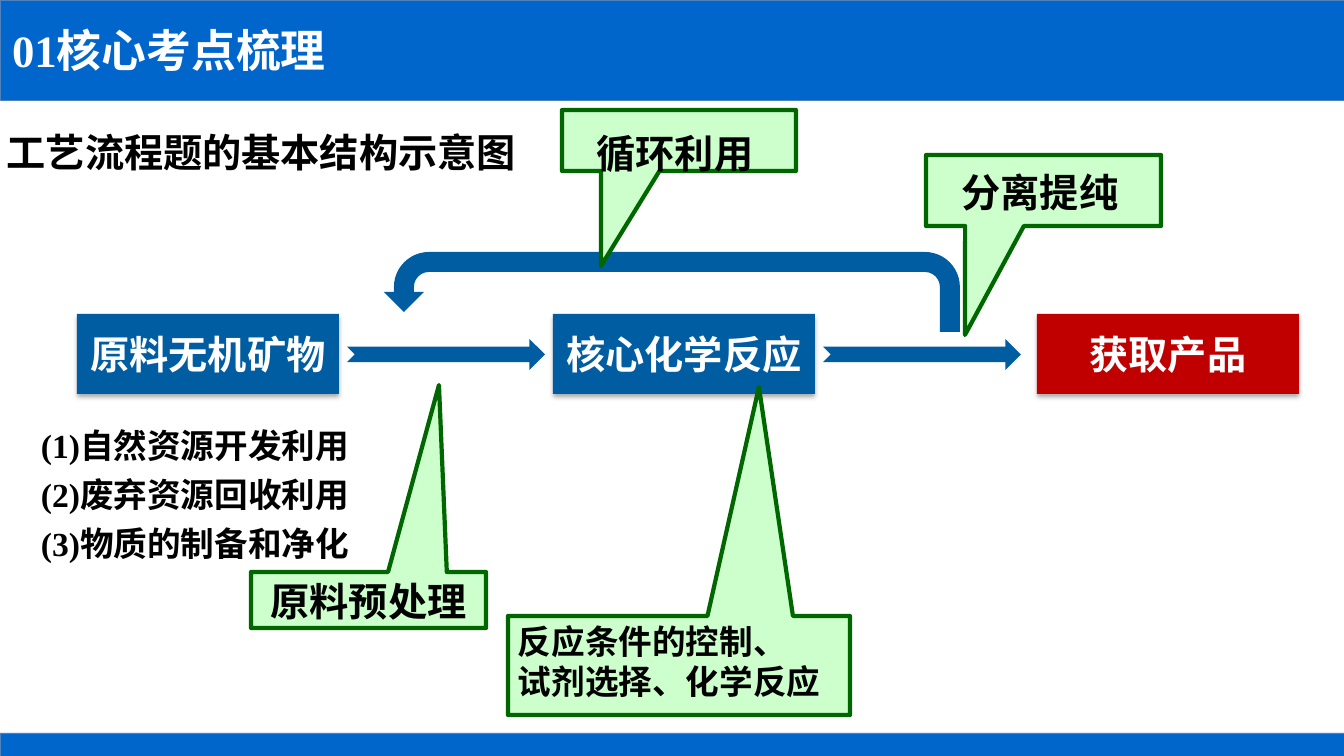
from lxml.etree import SubElement
from pptx import Presentation
from pptx.dml.color import RGBColor
from pptx.enum.shapes import MSO_SHAPE as Preset
from pptx.enum.text import MSO_ANCHOR as Anchor, MSO_AUTO_SIZE as AutoSize, PP_ALIGN as Align
from pptx.oxml.ns import qn
from pptx.util import Emu, Pt

EMU_PER_PX = 914400 / 100.8
SLIDE_W, SLIDE_H = 1344, 756

WHITE = RGBColor(0xFF, 0xFF, 0xFF)
BLACK = RGBColor(0x00, 0x00, 0x00)
BAND_BLUE = RGBColor(0x00, 0x66, 0xCC)
BAND_EDGE = RGBColor(0x4F, 0x81, 0xBD)
STEP_BLUE = RGBColor(0x00, 0x5D, 0xA2)
PRODUCT_RED = RGBColor(0xC0, 0x00, 0x00)
NOTE_GREEN = RGBColor(0xCC, 0xFF, 0xCC)
NOTE_EDGE = RGBColor(0x00, 0x66, 0x00)


def px(*lengths):
    return [Emu(round(length * EMU_PER_PX)) for length in lengths]


class FlowSlide:
    """Style and current slide, with one method per kind of element."""

    font_name = "Times New Roman"

    def __init__(self, presentation):
        title_only = presentation.slide_layouts[5]
        self.slide = presentation.slides.add_slide(title_only)
        self.shapes = self.slide.shapes
        background = self.slide.background.fill
        background.solid()
        background.fore_color.rgb = WHITE

    def add_lines(self, frame, lines, size, color=BLACK, align=Align.LEFT, spacing=None):
        for index, line in enumerate(lines):
            paragraph = frame.add_paragraph() if index else frame.paragraphs[0]
            paragraph.alignment = align
            if spacing:
                paragraph.line_spacing = spacing
            run = paragraph.add_run()
            run.text = line
            run.font.name = self.font_name
            run.font.size = Pt(size)
            run.font.bold = True
            run.font.color.rgb = color

    def block(self, preset, box, fill, edge=None, edge_pt=0):
        """Add a filled preset shape, outlined only when an edge colour is given."""
        shape = self.shapes.add_shape(preset, *px(*box))
        shape.shadow.inherit = False
        shape.fill.solid()
        shape.fill.fore_color.rgb = fill
        if edge is None:
            shape.line.fill.background()
        else:
            shape.line.color.rgb = edge
            shape.line.width = Pt(edge_pt)
        return shape

    def band(self, top, height):
        self.block(Preset.RECTANGLE, (0, top, SLIDE_W, height), BAND_BLUE, BAND_EDGE, 0.25)

    def title(self, text, box):
        title = self.shapes.title
        title.left, title.top, title.width, title.height = px(*box)
        frame = title.text_frame
        frame.vertical_anchor = Anchor.TOP
        frame.word_wrap = False
        frame.auto_size = AutoSize.SHAPE_TO_FIT_TEXT
        self.add_lines(frame, [text], 32, WHITE)
        # The title lies above the header band.
        title.element.getparent().append(title.element)

    def step(self, text, left, fill):
        shape = self.block(Preset.RECTANGLE, (left, 314, 262, 80), fill)
        shape.text_frame.vertical_anchor = Anchor.MIDDLE
        shape.text_frame.word_wrap = True
        self.add_lines(shape.text_frame, [text], 28, WHITE, Align.CENTER)
        effects = shape.element.spPr.find(qn("a:effectLst"))
        shadow = SubElement(effects, qn("a:outerShdw"), blurRad=str(Pt(3.5)),
                            dist=str(Pt(2.2)), dir="5400000", rotWithShape="0")
        black = SubElement(shadow, qn("a:srgbClr"), val=str(BLACK))
        SubElement(black, qn("a:alpha"), val="32000")

    def callout(self, box, tip, lines=(), size=28, align=Align.CENTER):
        """Add a callout whose tip is a point on the slide."""
        left, top, width, height = box
        shape = self.block(Preset.RECTANGULAR_CALLOUT, box, NOTE_GREEN, NOTE_EDGE, 3)
        shape.adjustments[0] = (tip[0] - left) / width - 0.5
        shape.adjustments[1] = (tip[1] - top) / height - 0.5
        shape.text_frame.vertical_anchor = Anchor.TOP
        shape.text_frame.word_wrap = True
        self.add_lines(shape.text_frame, lines, size, align=align)

    def label(self, text, box, size=28, align=Align.LEFT, spacing=None):
        frame = self.shapes.add_textbox(*px(*box)).text_frame
        frame.word_wrap = True
        frame.auto_size = AutoSize.SHAPE_TO_FIT_TEXT
        self.add_lines(frame, [text], size, align=align, spacing=spacing)


def main():
    presentation = Presentation()
    presentation.slide_width, presentation.slide_height = px(SLIDE_W, SLIDE_H)
    flow = FlowSlide(presentation)

    flow.band(0, 100)
    flow.band(733, 23)
    flow.title("01核心考点梳理", (2, 18, 350, 65))

    flow.step("原料无机矿物", 77, STEP_BLUE)
    flow.step("核心化学反应", 553, STEP_BLUE)
    flow.step("获取产品", 1037, PRODUCT_RED)
    for arrow_left in (347, 823):
        flow.block(Preset.NOTCHED_RIGHT_ARROW, (arrow_left, 339, 198, 31), STEP_BLUE)

    flow.callout((926, 155, 235, 71), (965, 335))
    flow.label("分离提纯", (926, 163, 228, 57), align=Align.CENTER)
    flow.callout((251, 572, 235, 56), (439, 385), ["原料预处理"])
    flow.callout((508, 616, 342, 99), (759, 387),
                 ["反应条件的控制、", "试剂选择、化学反应"], 24, Align.LEFT)

    flow.label("工艺流程题的基本结构示意图", (-3, 123, 562, 57))
    sources = ("(1)自然资源开发利用", "(2)废弃资源回收利用", "(3)物质的制备和净化")
    for row, source in enumerate(sources):
        flow.label(source, (31, 420 + 49 * row, 373, 50), 24)

    recycle_arrow = flow.block(Preset.U_TURN_ARROW, (384, 252, 576, 80), STEP_BLUE)
    recycle_arrow.element.spPr.xfrm.set("flipH", "1")
    flow.callout((562, 110, 234, 61), (601, 266))
    flow.label("循环利用", (560, 101, 230, 62), align=Align.CENTER, spacing=1.5)

    presentation.save("out.pptx")


if __name__ == "__main__":
    main()
